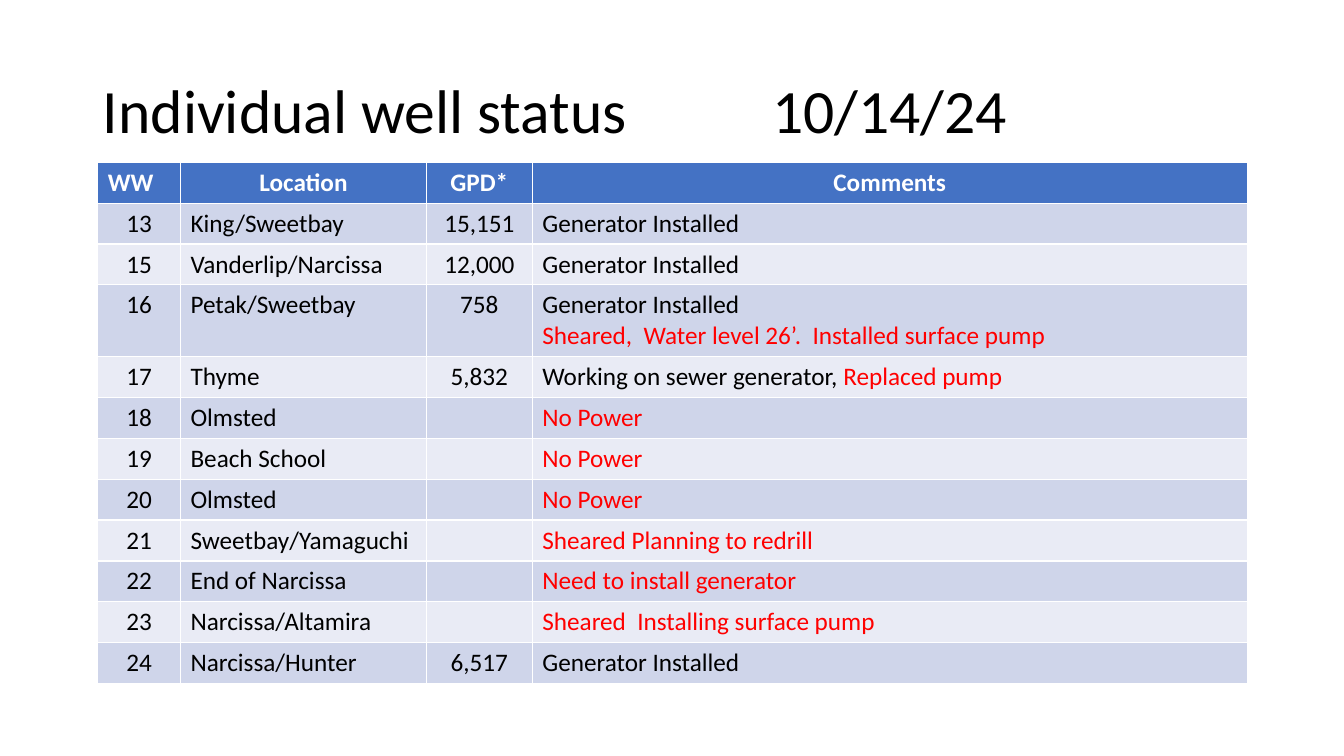
"""Build the individual well status slide."""
from pptx import Presentation
from pptx.dml.color import RGBColor
from pptx.enum import text
from pptx.util import Inches, Pt

BLACK = RGBColor(0x00, 0x00, 0x00)
WHITE = RGBColor(0xFF, 0xFF, 0xFF)
RED = RGBColor(0xFF, 0x00, 0x00)
HEADER_BLUE = RGBColor(0x44, 0x72, 0xC4)
BANDS = [RGBColor(0xCF, 0xD5, 0xEA), RGBColor(0xE9, 0xEB, 0xF5)]
LEFT, CENTER = text.PP_ALIGN.LEFT, text.PP_ALIGN.CENTER

HEADINGS = ["WW", "Location", "GPD*", "Comments"]
COLUMN_WIDTHS = [0.82, 2.44, 1.05, 7.09]
COLUMN_ALIGNMENTS = [CENTER, LEFT, CENTER, LEFT]
INSTALLED = [[("Generator Installed", BLACK)]]
NO_POWER = [[("No Power", RED)]]
WELLS = [
    ("13", "King/Sweetbay", "15,151", INSTALLED),
    ("15", "Vanderlip/Narcissa", "12,000", INSTALLED),
    ("16", "Petak/Sweetbay", "758", INSTALLED
     + [[("Sheared,  Water level 26’.  Installed surface pump", RED)]]),
    ("17", "Thyme", "5,832",
     [[("Working on sewer generator, ", BLACK), ("Replaced pump", RED)]]),
    ("18", "Olmsted", "", NO_POWER),
    ("19", "Beach School", "", NO_POWER),
    ("20", "Olmsted", "", NO_POWER),
    ("21", "Sweetbay/Yamaguchi", "", [[("Sheared Planning to redrill", RED)]]),
    ("22", "End of Narcissa", "", [[("Need to install generator", RED)]]),
    ("23", "Narcissa/Altamira", "", [[("Sheared  Installing surface pump", RED)]]),
    ("24", "Narcissa/Hunter", "6,517", INSTALLED),
]


def add_span(para, words, size, color, bold=False):
    span = para.add_run()
    span.text = words
    span.font.name = "Calibri"
    span.font.size = Pt(size)
    span.font.bold = bold
    span.font.color.rgb = color


def fill_cell(cell, paragraphs, fill, alignment, bold=False):
    cell.fill.solid()
    cell.fill.fore_color.rgb = fill
    for number, spans in enumerate(paragraphs):
        frame = cell.text_frame
        para = frame.add_paragraph() if number else frame.paragraphs[0]
        para.alignment = alignment
        for words, color in spans:
            add_span(para, words, 18, color, bold)


deck = Presentation()
deck.slide_width, deck.slide_height = Inches(13.33), Inches(7.5)
page = deck.slides.add_slide(deck.slide_layouts[5])

title = page.shapes.title
title.left, title.top = Inches(0.92), Inches(0.4)
title.width, title.height = Inches(11.5), Inches(1.45)
title.text_frame.vertical_anchor = text.MSO_ANCHOR.MIDDLE
heading = title.text_frame.paragraphs[0]
heading.alignment = LEFT
heading.line_spacing = 0.9
add_span(heading, "Individual well status\t\t\t 10/14/24", 44, BLACK)

table = page.shapes.add_table(
    len(WELLS) + 1, len(HEADINGS),
    Inches(0.97), Inches(1.61), Inches(11.4), Inches(5.15)).table
for column, width in zip(table.columns, COLUMN_WIDTHS):
    column.width = Inches(width)
for row in table.rows:
    row.height = Inches(0.4)

for index, label in enumerate(HEADINGS):
    fill_cell(table.cell(0, index), [[(label, WHITE)]], HEADER_BLUE,
              CENTER if index else LEFT, bold=True)

for number, (well, location, gallons, comments) in enumerate(WELLS, start=1):
    table.rows[number].height = Inches(0.4 + 0.3 * (len(comments) - 1))
    contents = [[[(words, BLACK)]] if words else []
                for words in (well, location, gallons)] + [comments]
    for index, paragraphs in enumerate(contents):
        fill_cell(table.cell(number, index), paragraphs,
                  BANDS[(number - 1) % 2], COLUMN_ALIGNMENTS[index])

deck.save("out.pptx")
